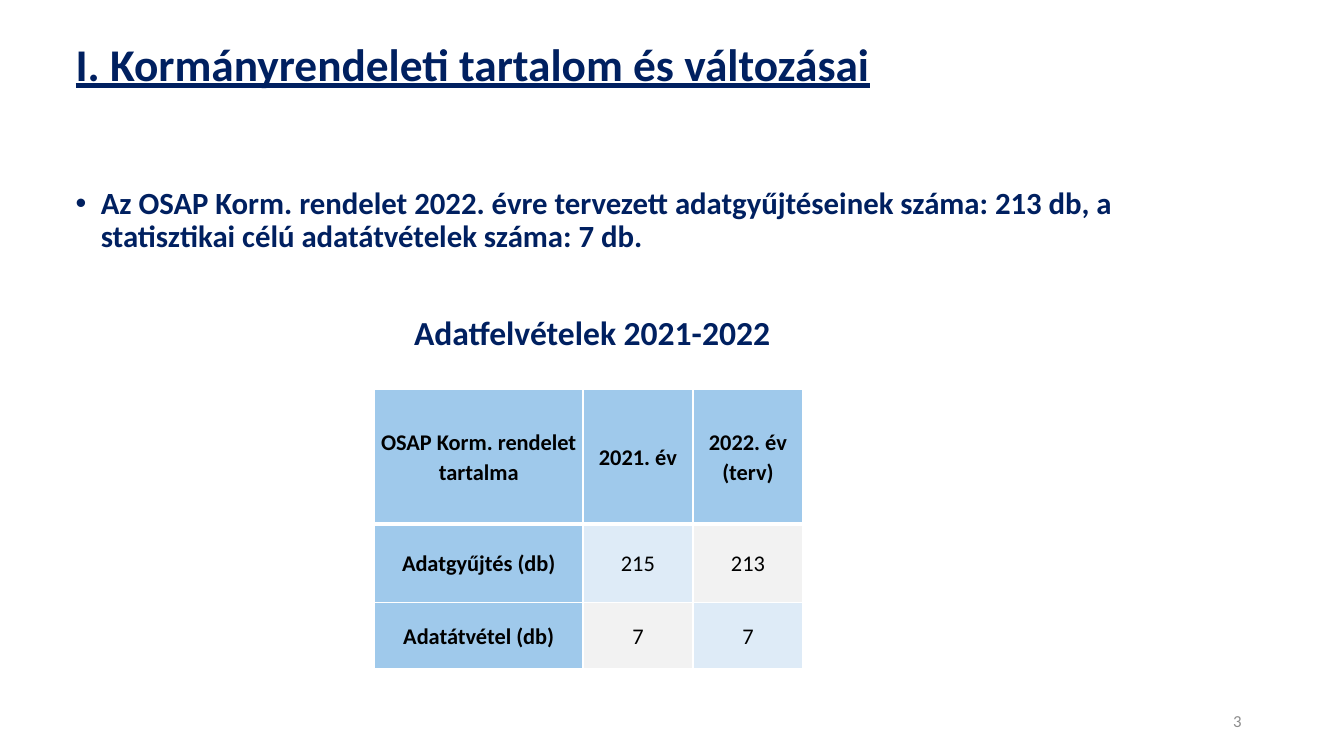
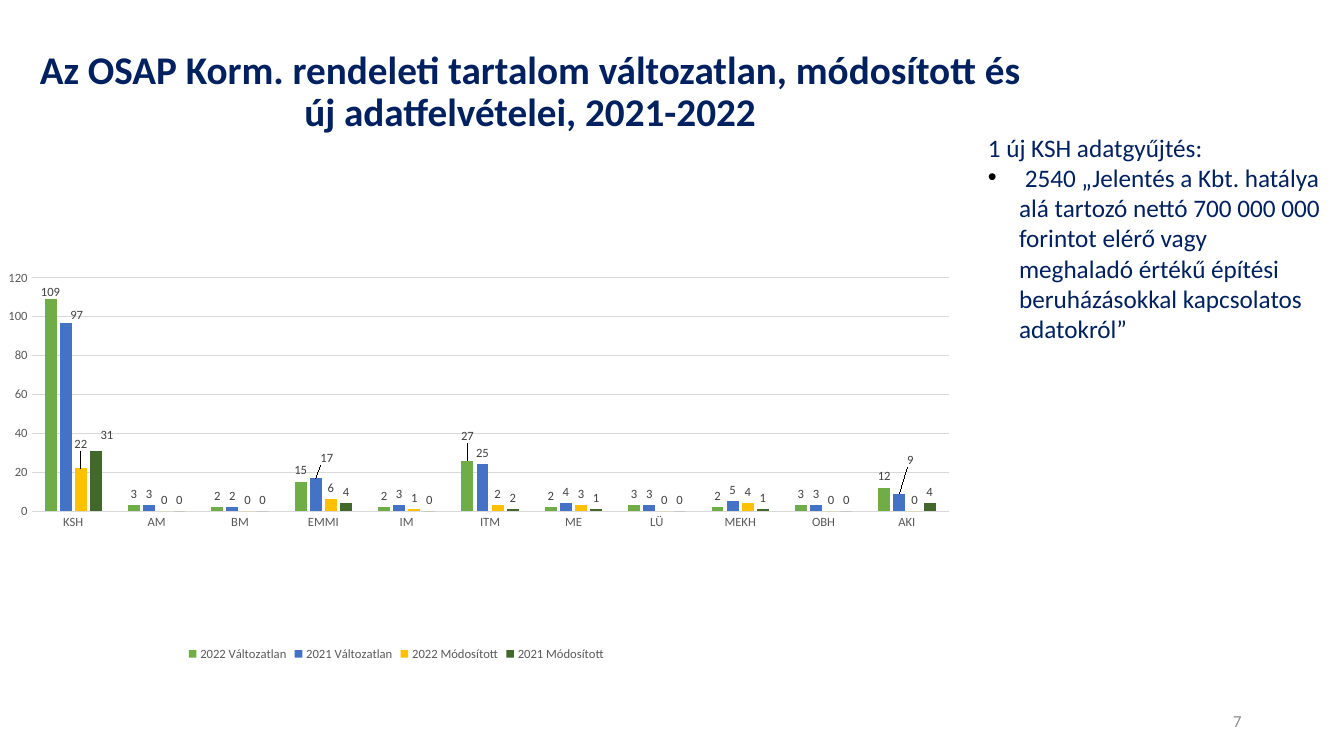
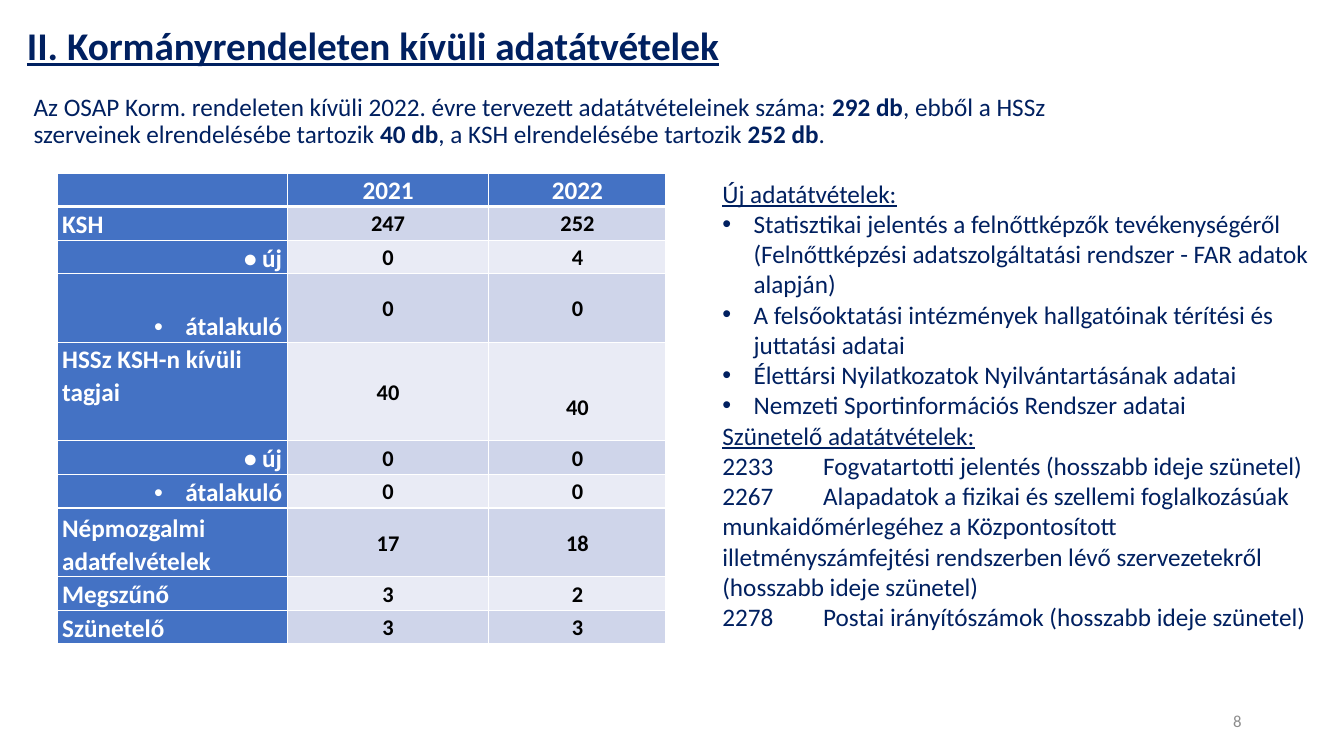
import copy
from dataclasses import dataclass

import lxml.etree
import pptx
import pptx.chart.data
import pptx.dml.color
import pptx.enum.chart
import pptx.enum.text
import pptx.oxml
import pptx.oxml.ns
import pptx.util

CELL = pptx.util.Inches(1 / 6)  # 80 columns by 45 rows
FONT = "Calibri"
NAVY, BLACK, WHITE, GREY = "002060", "000000", "FFFFFF", "8C8C8C"
SKY, PALE_BLUE, PALE_GREY = "9FC9EB", "DEEBF7", "F2F2F2"
BLUE, BAND_DARK, BAND_LIGHT = "4472C4", "CFD5EA", "E9EBF5"
AXIS_TEXT, LABEL_TEXT, GRID = "595959", "404040", "D9D9D9"

ALIGN = pptx.enum.text.PP_ALIGN
ANCHOR = pptx.enum.text.MSO_ANCHOR
CHART = pptx.enum.chart


def rgb(color):
    return pptx.dml.color.RGBColor.from_string(color)


def grid(*lengths):
    return [round(length * CELL) for length in lengths]


def add_xml(parent, tag, **attributes):
    element = lxml.etree.SubElement(parent, pptx.oxml.ns.qn(tag))
    for key, value in attributes.items():
        element.set(key, str(value))
    return element


def style_font(font, size, color, bold=False, underline=False):
    font.name, font.size = FONT, pptx.util.Pt(size)
    font.bold, font.underline = bold, underline
    font.color.rgb = rgb(color)


@dataclass
class Line:
    """One paragraph; runs are strings or (string, font changes) pairs."""
    runs: list
    bullet: tuple = None  # left margin and first-line indent, inches
    bullet_color: str = NAVY


def plain(text, **changes):
    return Line([(text, changes)])


def bulleted(*runs, margin=0.25, indent=-0.25, color=NAVY):
    return Line(list(runs), (margin, indent), color)


def write(frame, lines, size, color=NAVY, align=ALIGN.LEFT, spacing=1.0, **look):
    for index, line in enumerate(lines):
        paragraph = frame.paragraphs[0] if index == 0 else frame.add_paragraph()
        properties = paragraph._p.get_or_add_pPr()
        margin, indent = line.bullet or (0, 0)
        properties.set("marL", str(pptx.util.Inches(margin)))
        properties.set("indent", str(pptx.util.Inches(indent)))
        if line.bullet:
            tint = add_xml(properties, "a:buClr")
            add_xml(tint, "a:srgbClr", val=line.bullet_color)
            add_xml(properties, "a:buFont", typeface="Arial")
            add_xml(properties, "a:buChar", char="•")
        else:
            add_xml(properties, "a:buNone")
        paragraph.alignment = align
        paragraph.line_spacing = spacing
        paragraph.space_before = pptx.util.Pt(0)
        for item in line.runs:
            text, changes = (item, {}) if isinstance(item, str) else item
            run = paragraph.add_run()
            run.text = text
            style_font(run.font, **{"size": size, "color": color, **look, **changes})


def draw_borders(cell, top=1, bottom=1):
    properties = cell._tc.get_or_add_tcPr()
    sides = {"a:lnL": 1, "a:lnR": 1, "a:lnT": top, "a:lnB": bottom}
    for index, (tag, width) in enumerate(sides.items()):
        line = add_xml(properties, tag, w=pptx.util.Pt(width))
        add_xml(add_xml(line, "a:solidFill"), "a:srgbClr", val=WHITE)
        properties.insert(index, line)


class Deck:
    def __init__(self):
        self.file = pptx.Presentation()
        self.file.slide_width, self.file.slide_height = grid(80, 45)
        self.slide = None

    def new_slide(self, number, layout):
        self.slide = self.file.slides.add_slide(self.file.slide_layouts[layout])
        self.text((56.5, 41.7, 18, 2.4), [plain(str(number))], 12, color=GREY,
                  align=ALIGN.RIGHT, anchor=ANCHOR.MIDDLE)

    def fill_frame(self, shape, box, lines, size, anchor=ANCHOR.TOP, **look):
        shape.left, shape.top, shape.width, shape.height = grid(*box)
        frame = shape.text_frame
        frame.word_wrap = True
        frame.auto_size = pptx.enum.text.MSO_AUTO_SIZE.NONE
        frame.vertical_anchor = anchor
        write(frame, lines, size, **look)

    def text(self, box, lines, size, **look):
        self.fill_frame(self.slide.shapes.add_textbox(*grid(*box)), box, lines, size, **look)

    def title(self, box, text, size=28, **look):
        self.fill_frame(self.slide.shapes.title, box, [plain(text)], size,
                        anchor=ANCHOR.MIDDLE, spacing=0.9, bold=True, **look)

    def body(self, box, lines, size=18, slot=1, **look):
        self.fill_frame(self.slide.placeholders[slot], box, lines, size, **look)

    def table(self, corner, columns, rows, contents, style_cell):
        """style_cell(row, column) gives the fill, anchor and text look."""
        box = grid(*corner, sum(columns), sum(rows))
        table = self.slide.shapes.add_table(len(rows), len(columns), *box).table
        for column, width in zip(table.columns, grid(*columns)):
            column.width = width
        for row, height in zip(table.rows, grid(*rows)):
            row.height = height
        for r, values in enumerate(contents):
            for c, value in enumerate(values):
                cell = table.cell(r, c)
                fill, anchor, look = style_cell(r, c)
                cell.margin_left = cell.margin_right = pptx.util.Inches(0.05)
                cell.margin_top = cell.margin_bottom = 0
                cell.vertical_anchor = anchor
                cell.fill.solid()
                cell.fill.fore_color.rgb = rgb(fill)
                draw_borders(cell, 3 if r == 1 else 1, 3 if r == 0 else 1)
                if value:
                    line = value if isinstance(value, Line) else plain(value)
                    write(cell.text_frame, [line], spacing=1.07, **look)
        return table

    def column_chart(self, box, categories, series, plot_area):
        """series: (name, color, values) triples; plot_area: shares of the chart."""
        data = pptx.chart.data.CategoryChartData()
        data.categories = categories
        for name, _, values in series:
            data.add_series(name, values)
        chart = self.slide.shapes.add_chart(
            CHART.XL_CHART_TYPE.COLUMN_CLUSTERED, *grid(*box), data).chart
        style_font(chart.font, 10, BLACK)
        chart.has_title = False
        chart.has_legend = True
        chart.legend.position = CHART.XL_LEGEND_POSITION.BOTTOM
        chart.legend.include_in_layout = False
        style_font(chart.legend.font, 9, AXIS_TEXT)

        for axis in (chart.category_axis, chart.value_axis):
            axis.major_tick_mark = axis.minor_tick_mark = CHART.XL_TICK_MARK.NONE
            style_font(axis.tick_labels.font, 9, AXIS_TEXT)
        chart.value_axis.minimum_scale, chart.value_axis.maximum_scale = 0, 120
        chart.value_axis.major_unit = 20
        chart.value_axis.format.line.fill.background()
        for line in (chart.category_axis.format.line,
                     chart.value_axis.major_gridlines.format.line):
            line.color.rgb, line.width = rgb(GRID), pptx.util.Pt(0.75)

        plot = chart.plots[0]
        plot.gap_width, plot.overlap, plot.vary_by_categories = 219, -27, False
        for drawn, (_, color, _) in zip(plot.series, series):
            drawn.format.fill.solid()
            drawn.format.fill.fore_color.rgb = rgb(color)
            labels = drawn.data_labels
            labels.show_value = True
            labels.position = CHART.XL_LABEL_POSITION.OUTSIDE_END
            style_font(labels.font, 9, LABEL_TEXT)

        area = chart._chartSpace.find(".//" + pptx.oxml.ns.qn("c:plotArea"))
        for old in area.findall(pptx.oxml.ns.qn("c:layout")):
            area.remove(old)
        layout = add_xml(area, "c:layout")
        manual = add_xml(layout, "c:manualLayout")
        add_xml(manual, "c:layoutTarget", val="inner")
        for key in ("xMode", "yMode"):
            add_xml(manual, "c:" + key, val="edge")
        for key, share in zip("xywh", plot_area):
            add_xml(manual, "c:" + key, val=share)
        area.insert(0, layout)
        return plot

    def adjust_label(self, point, text=None, shift=(0, 0)):
        """Replace a data label's text or shift it by shares of the chart."""
        label = point.data_label
        if text:
            run = label.text_frame.paragraphs[0].add_run()
            run.text = text
            style_font(run.font, 9, LABEL_TEXT)
        else:
            style_font(label.font, 9, LABEL_TEXT)
        label.position = CHART.XL_LABEL_POSITION.OUTSIDE_END
        if any(shift):
            element = label._get_or_add_dLbl()
            layout = add_xml(element, "c:layout")
            manual = add_xml(layout, "c:manualLayout")
            for key, share in zip("xy", shift):
                add_xml(manual, "c:" + key, val=share)
            element.insert(1, layout)


def content_slide(deck):
    deck.new_slide(3, layout=1)
    deck.title((3.9, 2.1, 51.2, 3.7), "I. Kormányrendeleti tartalom és változásai",
               size=32.4, underline=True)
    deck.body((3.9, 10.9, 70.6, 6), [bulleted(
        "Az OSAP Korm. rendelet 2022. évre tervezett adatgyűjtéseinek száma: 213 db, "
        "a statisztikai célú adatátvételek száma: 7 db.")], 22, spacing=0.9, bold=True)
    deck.text((23.4, 18.25, 23.7, 3), [plain("Adatfelvételek 2021-2022")], 24,
              align=ALIGN.CENTER, bold=True)

    def style_cell(row, column):
        heading = row == 0 or column == 0
        fill = SKY if heading else (PALE_BLUE if row == column else PALE_GREY)
        return fill, ANCHOR.MIDDLE, dict(size=16, color=BLACK, align=ALIGN.CENTER, bold=heading)

    deck.table((22.3, 23.2), (12.4, 6.55, 6.55), (8, 4.65, 3.95), [
        ("OSAP Korm. rendelet tartalma", "2021. év", "2022. év (terv)"),
        ("Adatgyűjtés (db)", "215", "213"),
        ("Adatátvétel (db)", "7", "7"),
    ], style_cell)


def survey_slide(deck):
    deck.new_slide(7, layout=1)
    deck.title((1, 2.1, 61.1, 6.85), "Az OSAP Korm. rendeleti tartalom változatlan, módosított "
               "és új adatfelvételei, 2021-2022", align=ALIGN.CENTER)
    deck.body((58.2, 7.55, 21.2, 18.8), [
        plain("1 új KSH adatgyűjtés:"),
        bulleted((" ", {"color": BLACK}),
                 "2540 „Jelentés a Kbt. hatálya alá tartozó nettó 700 000 000 forintot elérő "
                 "vagy meghaladó értékű építési beruházásokkal kapcsolatos adatokról”",
                 margin=0.31, indent=-0.31, color=BLACK),
    ])
    ministries = ["KSH", "AM", "BM", "EMMI", "IM", "ITM", "ME", "LÜ", "MEKH", "OBH", "AKI"]
    plot = deck.column_chart((-9.3, 13.4, 65.8, 26.2), ministries, [
        ("2022 Változatlan", "70AD47", (109, 3, 2, 15, 2, 26, 2, 3, 2, 3, 12)),
        ("2021 Változatlan", "4472C4", (97, 3, 2, 17, 3, 24, 4, 3, 5, 3, 9)),
        ("2022 Módosított", "FFC000", (22, 0, 0, 6, 1, 3, 3, 0, 4, 0, 0)),
        ("2021 Módosított", "43682B", (31, 0, 0, 4, 0, 1, 1, 0, 1, 0, 4)),
    ], plot_area=(0.17, 0.12, 0.83, 0.53))
    for series, ministry, text, shift in [
        (0, "KSH", None, (0, 0.01)), (0, "ITM", "27", (0, -0.03)),
        (1, "KSH", None, (0.01, 0.01)), (1, "EMMI", None, (0.01, -0.02)),
        (1, "ITM", "25", (0, 0)), (1, "AKI", None, (0.01, -0.05)),
        (2, "KSH", None, (0, -0.03)), (2, "ITM", "2", (0, 0)),
        (3, "KSH", None, (0.01, -0.01)), (3, "ITM", "2", (0, 0)),
    ]:
        point = plot.series[series].points[ministries.index(ministry)]
        deck.adjust_label(point, text, shift)


def takeover_slide(deck):
    deck.new_slide(8, layout=3)
    deck.title((1, 1, 50, 3.7), "II. Kormányrendeleten kívüli adatátvételek", underline=True)
    strong = {"bold": True}
    deck.body((1.4, 5.35, 64.6, 4), [Line([
        "Az OSAP Korm. rendeleten kívüli 2022. évre tervezett adatátvételeinek száma: ",
        ("292 db", strong), ", ebből a HSSz szerveinek elrendelésébe tartozik ",
        ("40 db", strong), ", a KSH elrendelésébe tartozik ", ("252 db", strong), "."])],
        spacing=0.9)

    new, changing = "• új", bulleted("átalakuló", margin=0, indent=-0.31, color=WHITE)
    members_row = 4
    contents = [
        ("", "2021", "2022"),
        ("KSH", "247", "252"),
        (new, "0", "4"),
        (changing, "0", "0"),
        ("HSSz KSH-n kívüli tagjai", "40", "40"),
        (new, "0", "0"),
        (changing, "0", "0"),
        ("Népmozgalmi adatfelvételek", "17", "18"),
        ("Megszűnő", "3", "2"),
        ("Szünetelő", "3", "3"),
    ]

    def style_cell(row, column):
        if row and column:
            fill = BAND_DARK if row % 2 else BAND_LIGHT
            return fill, ANCHOR.MIDDLE, dict(size=16, color=BLACK, align=ALIGN.CENTER, bold=True)
        indented = contents[row][0] in (new, changing)
        align = ALIGN.CENTER if row == 0 else ALIGN.RIGHT if indented else ALIGN.LEFT
        anchor = ANCHOR.TOP if row == members_row else ANCHOR.BOTTOM
        return BLUE, anchor, dict(size=18, color=WHITE, align=align, bold=True)

    heights = [2, 2, 2, 4.1, 5.85, 2, 2, 4.1, 2, 2]
    table = deck.table((3.4, 10.3), (13.7, 12, 10.55), heights, contents, style_cell)
    table.cell(members_row, 2).margin_top = pptx.util.Inches(0.3)

    fresh = [
        "Statisztikai jelentés a felnőttképzők tevékenységéről (Felnőttképzési "
        "adatszolgáltatási rendszer - FAR adatok alapján)",
        "A felsőoktatási intézmények hallgatóinak térítési és juttatási adatai",
        "Élettársi Nyilatkozatok Nyilvántartásának adatai",
        "Nemzeti Sportinformációs Rendszer adatai",
    ]
    paused = [
        "2233\tFogvatartotti jelentés (hosszabb ideje szünetel)",
        "2267\tAlapadatok a fizikai és szellemi foglalkozásúak munkaidőmérlegéhez a "
        "Központosított illetményszámfejtési rendszerben lévő szervezetekről "
        "(hosszabb ideje szünetel)",
        "2278\tPostai irányítószámok (hosszabb ideje szünetel)",
    ]
    deck.body((42.4, 10.3, 36.4, 31.5), [
        plain("Új adatátvételek:", underline=True),
        *[bulleted(entry, margin=0.31, indent=-0.31) for entry in fresh],
        plain("Szünetelő adatátvételek:", underline=True),
        *[plain(entry) for entry in paused],
    ], slot=2)


def main():
    deck = Deck()
    for build in (content_slide, survey_slide, takeover_slide):
        build(deck)
    deck.file.save("out.pptx")


if __name__ == "__main__":
    main()
